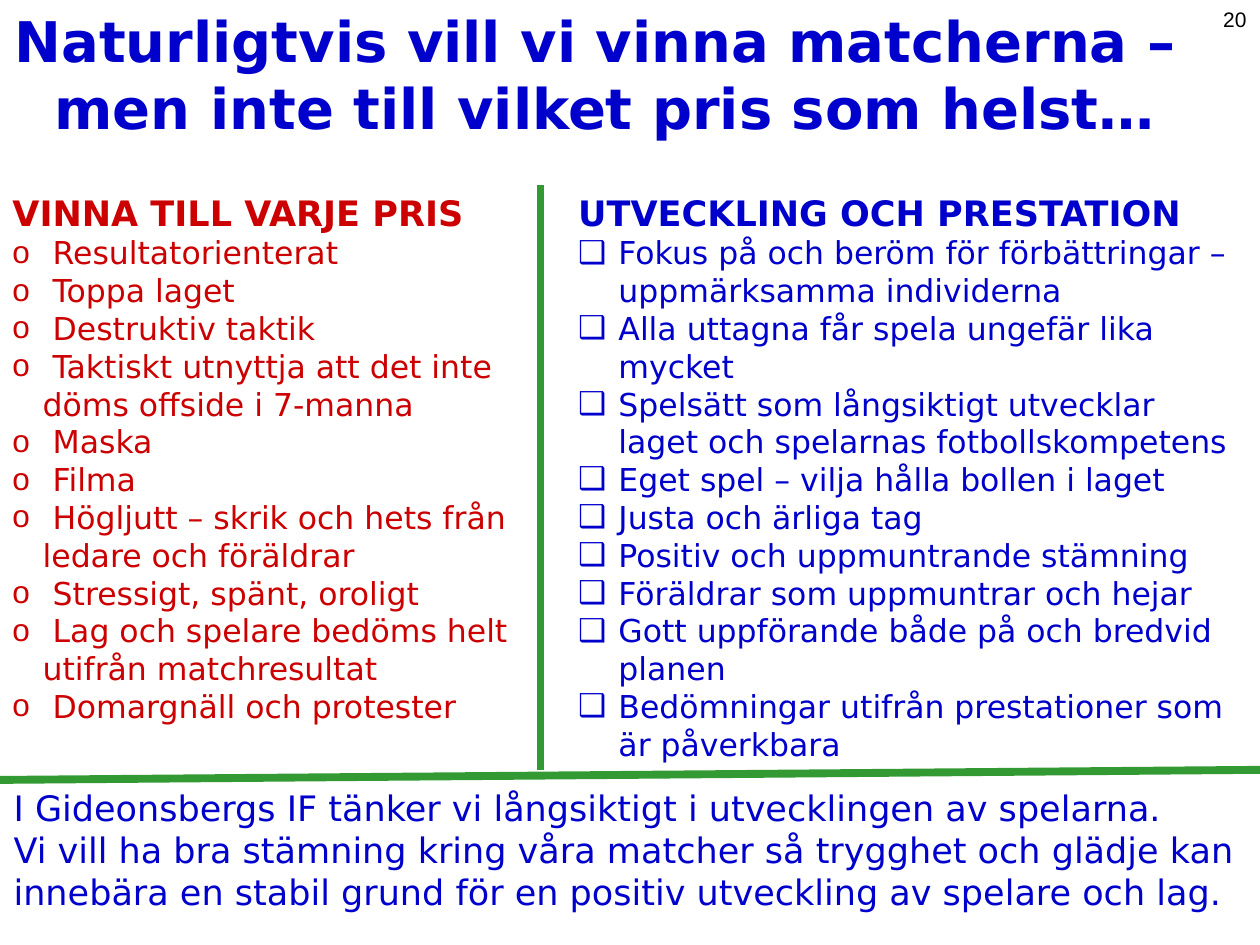
import pptx
import pptx.util
import pptx.dml.color
import pptx.enum.shapes
import pptx.enum.text
import pptx.oxml.ns
from lxml import etree
from pptx.util import Inches, Pt

RED = pptx.dml.color.RGBColor(0xCC, 0x00, 0x00)
BLUE = pptx.dml.color.RGBColor(0x00, 0x00, 0xCC)
GREEN = pptx.dml.color.RGBColor(0x33, 0x99, 0x33)
BLACK = pptx.dml.color.RGBColor(0x00, 0x00, 0x00)
FONT = "DejaVu Sans"
TEXT_INDENT = Inches(0.32)

# Each item is a list of its lines.
WIN_ITEMS = [
    ["Resultatorienterat"],
    ["Toppa laget"],
    ["Destruktiv taktik"],
    ["Taktiskt utnyttja att det inte", "döms offside i 7-manna"],
    ["Maska"],
    ["Filma"],
    ["Högljutt – skrik och hets från", "ledare och föräldrar"],
    ["Stressigt, spänt, oroligt"],
    ["Lag och spelare bedöms helt", "utifrån matchresultat"],
    ["Domargnäll och protester"],
]
GROWTH_ITEMS = [
    ["Fokus på och beröm för förbättringar –", "uppmärksamma individerna"],
    ["Alla uttagna får spela ungefär lika", "mycket"],
    ["Spelsätt som långsiktigt utvecklar", "laget och spelarnas fotbollskompetens"],
    ["Eget spel – vilja hålla bollen i laget"],
    ["Justa och ärliga tag"],
    ["Positiv och uppmuntrande stämning"],
    ["Föräldrar som uppmuntrar och hejar"],
    ["Gott uppförande både på och bredvid", "planen"],
    ["Bedömningar utifrån prestationer som", "är påverkbara"],
]


def add_text_frame(slide, box):
    tf = slide.shapes.add_textbox(*map(Inches, box)).text_frame
    tf.word_wrap = False
    tf.auto_size = pptx.enum.text.MSO_AUTO_SIZE.SHAPE_TO_FIT_TEXT
    return tf


def add_line(tf, text, size, color, bold=False, font=FONT):
    """Write into the empty first paragraph, or append a new one."""
    p = tf.paragraphs[0]
    if p.runs:
        p = tf.add_paragraph()
    r = p.add_run()
    r.text = text
    r.font.name = font
    r.font.size = Pt(size)
    r.font.bold = bold
    r.font.color.rgb = color
    return p


def set_indent(p, left, bullet=None):
    """Indent a paragraph; a bullet hangs back to the box edge."""
    pPr = p._p.get_or_add_pPr()
    pPr.set("marL", str(left))
    pPr.set("indent", str(-left if bullet else 0))
    if bullet:
        qn = pptx.oxml.ns.qn
        etree.SubElement(pPr, qn("a:buFont")).set("typeface", bullet[1])
        etree.SubElement(pPr, qn("a:buChar")).set("char", bullet[0])


def add_title(slide, box):
    tf = add_text_frame(slide, box)
    for text in ("Naturligtvis vill vi vinna matcherna – ",
                 "men inte till vilket pris som helst…"):
        p = add_line(tf, text, 32, BLUE, bold=True)
        p.alignment = pptx.enum.text.PP_ALIGN.CENTER


def add_column(slide, box, heading, items, color, bullet, continuation):
    tf = add_text_frame(slide, box)
    add_line(tf, heading, 20, color, bold=True)
    for first, *rest in items:
        set_indent(add_line(tf, first, 18, color), TEXT_INDENT, bullet)
        for text in rest:
            set_indent(add_line(tf, text, 18, color), continuation)


def add_summary(slide, box):
    tf = add_text_frame(slide, box)
    for text in (
        "I Gideonsbergs IF tänker vi långsiktigt i utvecklingen av spelarna.",
        "Vi vill ha bra stämning kring våra matcher så trygghet och glädje kan",
        "innebära en stabil grund för en positiv utveckling av spelare och lag.",
    ):
        add_line(tf, text, 20, BLUE)


def add_page_number(slide, box):
    add_line(add_text_frame(slide, box), "20", 12, BLACK, font="Arial")


def add_divider(slide, *ends):
    line = slide.shapes.add_connector(
        pptx.enum.shapes.MSO_CONNECTOR.STRAIGHT, *map(Inches, ends))
    line.line.color.rgb = GREEN
    line.line.width = Pt(4.5)
    etree.SubElement(line._element.spPr, pptx.oxml.ns.qn("a:effectLst"))


def main():
    prs = pptx.Presentation()
    prs.slide_width = Inches(10)
    prs.slide_height = Inches(7.5)
    slide = prs.slides.add_slide(prs.slide_layouts[6])

    add_column(slide, (0, 1.47, 4.22, 4.64), "VINNA TILL VARJE PRIS",
               WIN_ITEMS, RED, ("o", "Arial"), Inches(0.24))
    add_column(slide, (4.49, 1.47, 5.51, 4.94), "UTVECKLING OCH PRESTATION",
               GROWTH_ITEMS, BLUE, ("❑", FONT), TEXT_INDENT)
    add_title(slide, (0, 0, 9.61, 1.17))
    add_divider(slide, 4.29, 1.47, 4.29, 6.11)
    add_summary(slide, (0.01, 6.19, 10.13, 1.1))
    add_divider(slide, 10, 6.11, 0, 6.19)
    add_page_number(slide, (9.61, 0, 0.39, 0.3))
    prs.save("out.pptx")


if __name__ == "__main__":
    main()
